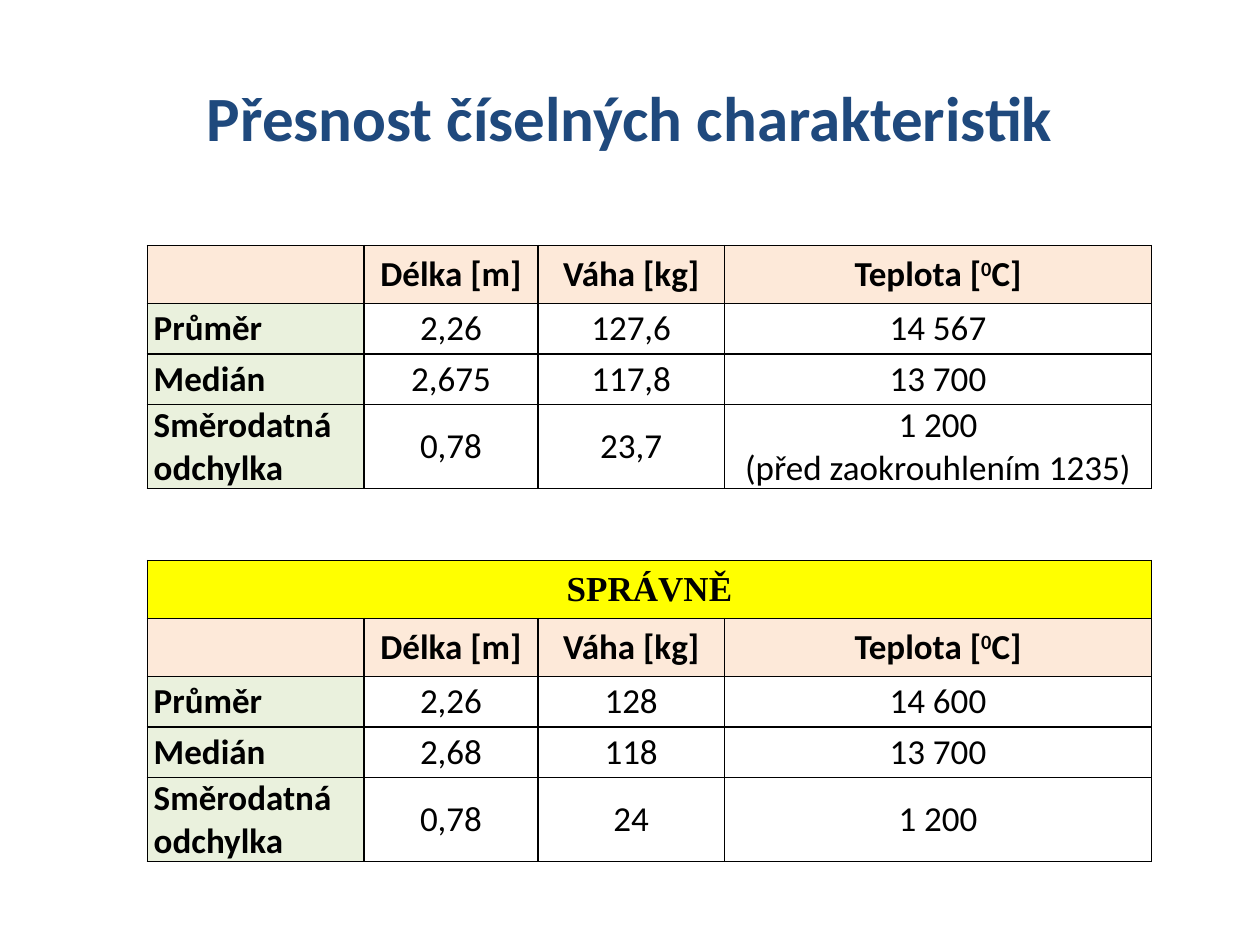
from lxml import etree
from pptx import Presentation
from pptx.dml.color import RGBColor
from pptx.enum.text import MSO_ANCHOR, PP_ALIGN
from pptx.oxml.ns import qn
from pptx.util import Inches, Pt

LEFT, CENTER = PP_ALIGN.LEFT, PP_ALIGN.CENTER
MIDDLE = MSO_ANCHOR.MIDDLE
NAVY = RGBColor(0x1F, 0x49, 0x7D)
BLACK = RGBColor(0x00, 0x00, 0x00)
PEACH = RGBColor(0xFD, 0xE9, 0xD9)
GREEN = RGBColor(0xEA, 0xF1, 0xDD)
YELLOW = RGBColor(0xFF, 0xFF, 0x00)

COLS = [1.72, 1.38, 1.48, 3.39]
HEAD_H, ROW_H, LAST_H = 0.46, 0.4, 0.65
HEADER = ["", "Délka [m]", "Váha [kg]", "Teplota [^0^C]"]
LABELS = ["Průměr", "Medián", "Směrodatná odchylka"]
MEASURED = [
    ["2,26", "127,6", "14 567"],
    ["2,675", "117,8", "13 700"],
    ["0,78", "23,7", "1 200\n(před zaokrouhlením 1235)"],
]
ROUNDED = [
    ["2,26", "128", "14 600"],
    ["2,68", "118", "13 700"],
    ["0,78", "24", "1 200"],
]


def write(tf, text, size=20, font="Calibri", color=BLACK, bold=False, align=CENTER):
    for i, line in enumerate(text.split("\n")):
        p = tf.paragraphs[0] if i == 0 else tf.add_paragraph()
        p.alignment = align
        for j, part in enumerate(line.split("^")):
            if not part:
                continue
            r = p.add_run()
            r.text = part
            r.font.size = Pt(size)
            r.font.name = font
            r.font.color.rgb = color
            r.font.bold = bold
            if j % 2:
                r.font._element.set("baseline", "30000")


class Deck:
    def __init__(self):
        self.prs = Presentation()
        self.prs.slide_width = Inches(10)
        self.prs.slide_height = Inches(7.5)
        self.s = self.prs.slides.add_slide(self.prs.slide_layouts[6])

    def title(self, text, x, y, w, h):
        sp = self.s.shapes.add_textbox(Inches(x), Inches(y), Inches(w), Inches(h))
        tf = sp.text_frame
        tf.word_wrap = True
        tf.vertical_anchor = MIDDLE
        write(tf, text, size=36, color=NAVY, bold=True)

    def border(self, cell):
        tcPr = cell._tc.get_or_add_tcPr()
        for i, side in enumerate(("a:lnL", "a:lnR", "a:lnT", "a:lnB")):
            ln = etree.Element(qn(side), w=str(Pt(1)))
            fill = etree.SubElement(ln, qn("a:solidFill"))
            etree.SubElement(fill, qn("a:srgbClr"), val=str(BLACK))
            tcPr.insert(i, ln)

    def cell(self, cell, text, fill=None, **fmt):
        cell.margin_left = cell.margin_right = Inches(0.05)
        cell.margin_top = cell.margin_bottom = 0
        cell.vertical_anchor = MIDDLE
        if fill is None:
            cell.fill.background()
        else:
            cell.fill.solid()
            cell.fill.fore_color.rgb = fill
        self.border(cell)
        write(cell.text_frame, text, **fmt)

    def table(self, x, y, values, banner=None):
        top = 1 if banner else 0
        heights = [HEAD_H] * (top + 1) + [ROW_H] * (len(values) - 1) + [LAST_H]
        frame = self.s.shapes.add_table(
            len(heights), len(COLS), Inches(x), Inches(y),
            Inches(sum(COLS)), Inches(sum(heights)))
        tbl = frame.table
        tbl.first_row = tbl.horz_banding = False
        for col, w in zip(tbl.columns, COLS):
            col.width = Inches(w)
        for row, h in zip(tbl.rows, heights):
            row.height = Inches(h)
        if banner:
            tbl.cell(0, 0).merge(tbl.cell(0, len(COLS) - 1))
            for c in range(len(COLS)):
                self.cell(tbl.cell(0, c), "" if c else banner, YELLOW,
                          font="Times New Roman", bold=True)
        for c, text in enumerate(HEADER):
            self.cell(tbl.cell(top, c), text, PEACH, bold=True)
        for r, (label, row) in enumerate(zip(LABELS, values), top + 1):
            self.cell(tbl.cell(r, 0), label, GREEN, bold=True, align=LEFT)
            for c, text in enumerate(row, 1):
                self.cell(tbl.cell(r, c), text)


def main():
    deck = Deck()
    deck.title("Přesnost číselných charakteristik", 0.5, 0.3, 9, 1.25)
    deck.table(1.17, 1.95, MEASURED)
    deck.table(1.17, 4.45, ROUNDED, banner="SPRÁVNĚ")
    deck.prs.save("out.pptx")


if __name__ == "__main__":
    main()
